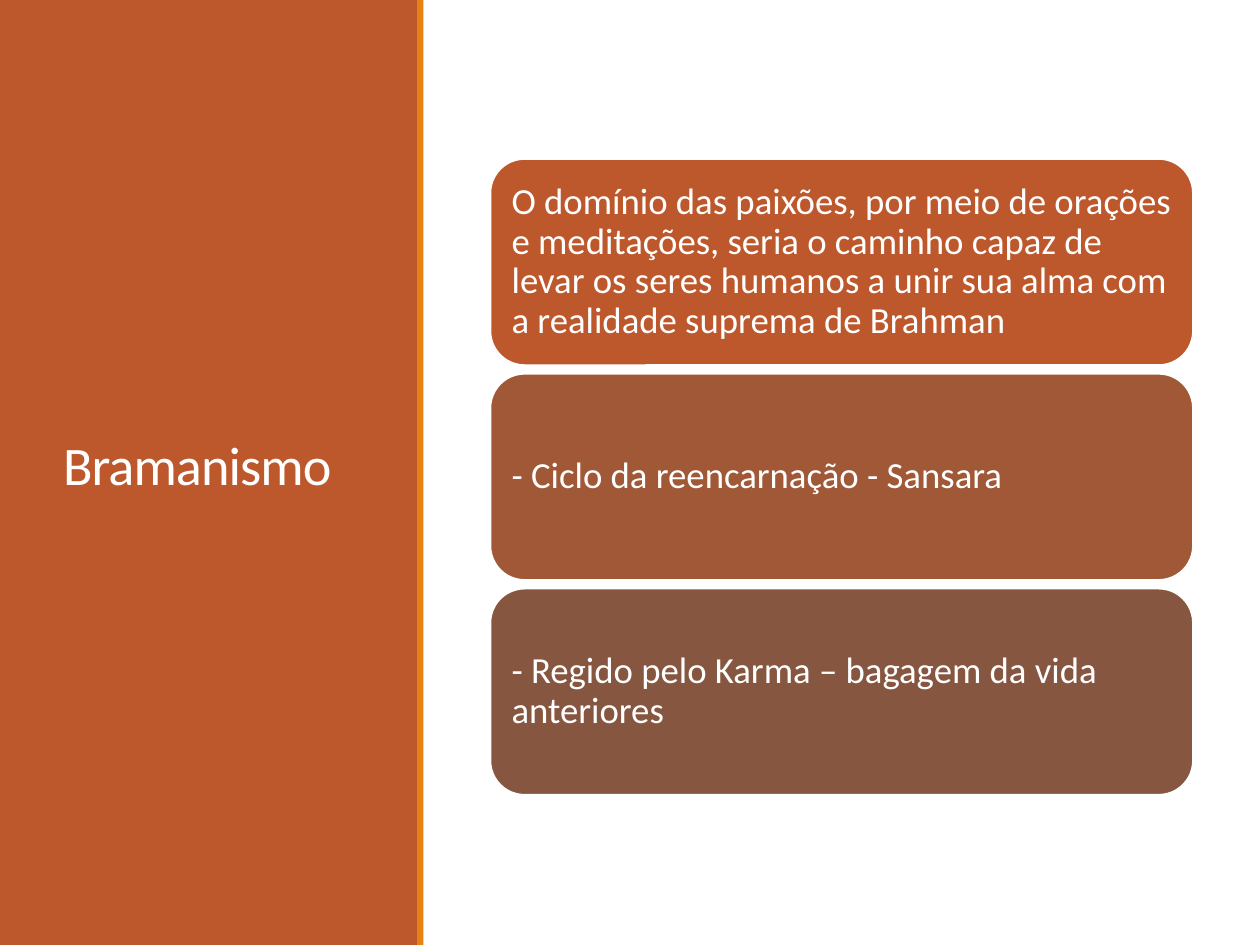
from pptx import Presentation
from pptx.dml.color import RGBColor
from pptx.enum.shapes import MSO_SHAPE
from pptx.enum.text import MSO_ANCHOR, MSO_AUTO_SIZE, PP_ALIGN
from pptx.util import Inches, Pt

RECTANGLE = MSO_SHAPE.RECTANGLE
ROUNDED = MSO_SHAPE.ROUNDED_RECTANGLE
MIDDLE = MSO_ANCHOR.MIDDLE
LEFT = PP_ALIGN.LEFT
NO_AUTOFIT = MSO_AUTO_SIZE.NONE

RUST = RGBColor(0xBD, 0x58, 0x2C)
ORANGE = RGBColor(0xE4, 0x83, 0x12)
SIENNA = RGBColor(0xA0, 0x58, 0x37)
BROWN = RGBColor(0x86, 0x56, 0x40)
WHITE = RGBColor(0xFF, 0xFF, 0xFF)

FONT = "Calibri"
CARD_TOP = 1.26
CARD_HEIGHT = 1.64
CARD_PITCH = 1.705
CARDS = [
    ("O domínio das paixões, por meio de orações e meditações, seria o caminho "
     "capaz de levar os seres humanos a unir sua alma com a realidade suprema "
     "de Brahman", RUST),
    ("- Ciclo da reencarnação - Sansara", SIENNA),
    ("- Regido pelo Karma – bagagem da vida anteriores", BROWN),
]


def add_box(page, kind, left, top, width, height, color):
    box = page.shapes.add_shape(
        kind, Inches(left), Inches(top), Inches(width), Inches(height))
    box.shadow.inherit = False
    box.fill.solid()
    box.fill.fore_color.rgb = color
    box.line.fill.background()
    return box


def write_text(frame, text, size, line_spacing):
    frame.word_wrap = True
    frame.auto_size = NO_AUTOFIT
    frame.vertical_anchor = MIDDLE
    para = frame.paragraphs[0]
    para.alignment = LEFT
    para.line_spacing = line_spacing
    span = para.add_run()
    span.text = text
    span.font.name = FONT
    span.font.size = Pt(size)
    span.font.color.rgb = WHITE
    return span


def add_title(page, text):
    title = page.shapes.title
    title.left, title.top = Inches(0.4), Inches(0.57)
    title.width, title.height = Inches(2.53), Inches(6.31)
    span = write_text(title.text_frame, text, 31, 0.85)
    span.font._element.set("spc", "-50")


def add_card(page, top, text, color):
    card = add_box(page, ROUNDED, 3.89, top, 5.58, CARD_HEIGHT, color)
    card.line.color.rgb = WHITE
    card.line.width = Pt(1.25)
    frame = card.text_frame
    frame.margin_left = frame.margin_right = Inches(0.09)
    frame.margin_top = frame.margin_bottom = Inches(0.09)
    write_text(frame, text, 21, 0.9)


def main():
    deck = Presentation()
    deck.slide_width, deck.slide_height = Inches(10), Inches(7.5)
    page = deck.slides.add_slide(deck.slide_layouts[5])

    panel = add_box(page, RECTANGLE, 0, 0, 3.32, 7.5, RUST)
    page.shapes.title._element.addprevious(panel._element)
    add_title(page, "Bramanismo")
    add_box(page, RECTANGLE, 3.31, 0, 0.05, 7.5, ORANGE)
    for index, (text, color) in enumerate(CARDS):
        add_card(page, CARD_TOP + index * CARD_PITCH, text, color)

    deck.save("out.pptx")


if __name__ == "__main__":
    main()
